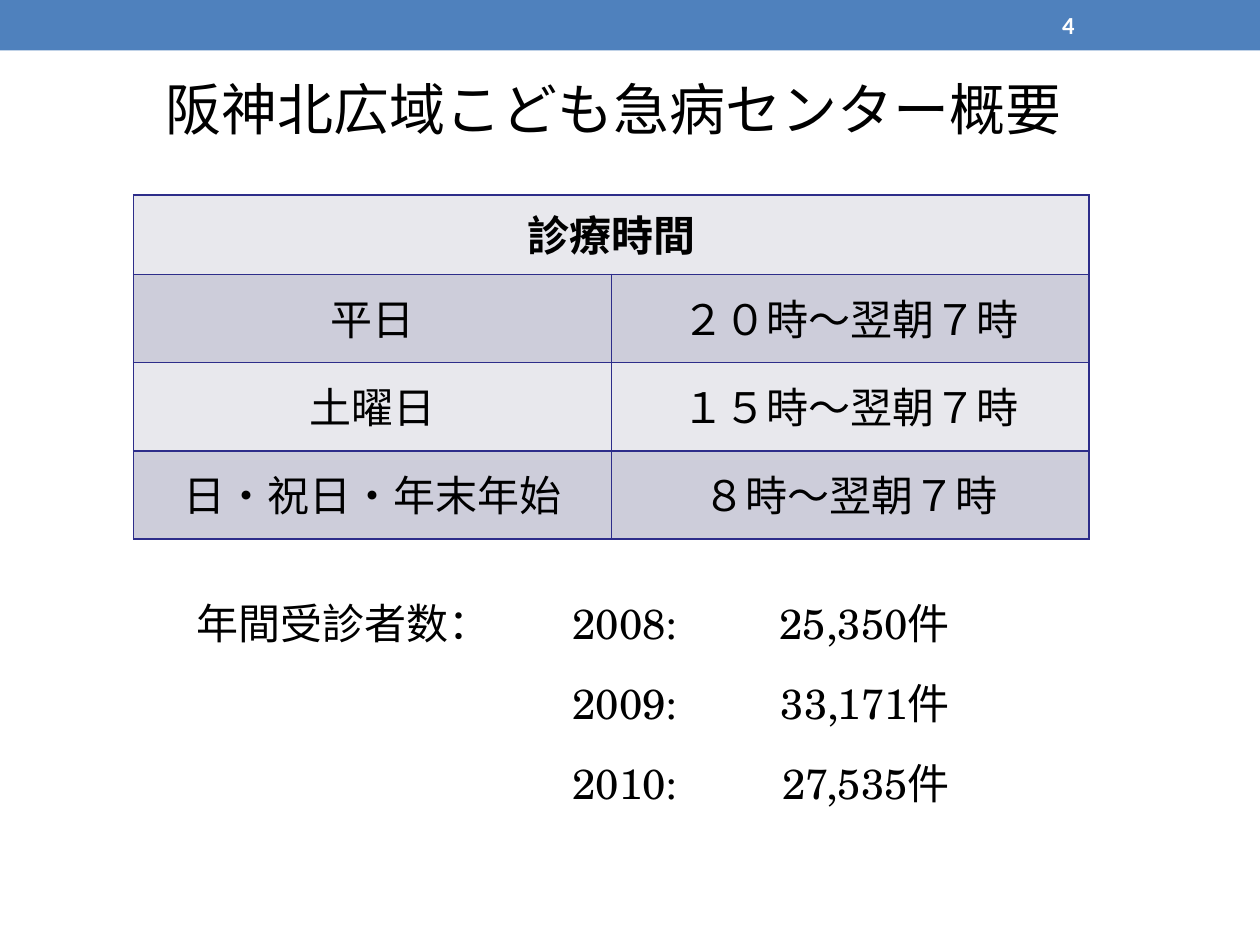
from dataclasses import dataclass

from lxml import etree
from pptx import Presentation
from pptx import util as u
from pptx.dml.color import RGBColor
from pptx.enum import shapes, text
from pptx.oxml import ns


@dataclass(frozen=True)
class Theme:
    body_font: str = "TeX Gyre Schola"
    number_font: str = "Calibri"
    title_size: float = 32
    body_size: float = 24
    number_size: float = 14
    ink: str = "000000"
    paper: str = "FFFFFF"
    banner: str = "4F81BD"
    border: str = "2D2D8A"
    bands: tuple = ("E8E8ED", "CDCDDA")


def write(paragraph, content, *, font, size, color, bold=False, align=None,
          before=None, spacing=None, tabs=()):
    run = paragraph.add_run()
    run.text = content
    run.font.name = font
    run.font.size = u.Pt(size)
    run.font.bold = bold
    run.font.color.rgb = RGBColor.from_string(color)
    east_asian = etree.SubElement(run.font._element, ns.qn("a:ea"))
    east_asian.set("typeface", font)
    paragraph.alignment = align
    if before is not None:
        paragraph.space_before = u.Pt(before)
    if spacing is not None:
        paragraph.line_spacing = spacing
    if tabs:
        properties = paragraph._p.get_or_add_pPr()
        tab_list = etree.SubElement(properties, ns.qn("a:tabLst"))
        for position in tabs:
            tab = etree.SubElement(tab_list, ns.qn("a:tab"))
            tab.set("pos", str(u.Pt(position)))
            tab.set("algn", "r")


class SlideBuilder:
    def __init__(self, presentation, theme):
        self.theme = theme
        self.slide = presentation.slides.add_slide(presentation.slide_layouts[5])

    def body_format(self, **changes):
        theme = self.theme
        return {"font": theme.body_font, "size": theme.body_size,
                "color": theme.ink, **changes}

    def banner(self, left, top, width, height):
        shape = self.slide.shapes.add_shape(
            shapes.MSO_SHAPE.RECTANGLE, *map(u.Pt, (left, top, width, height)))
        shape.shadow.inherit = False
        shape.fill.solid()
        shape.fill.fore_color.rgb = RGBColor.from_string(self.theme.banner)
        shape.line.fill.background()

    def title(self, content, left, top, width, height):
        shape = self.slide.shapes.title
        shape.left, shape.top, shape.width, shape.height = map(
            u.Pt, (left, top, width, height))
        frame = shape.text_frame
        frame.auto_size = text.MSO_AUTO_SIZE.NONE
        frame.vertical_anchor = text.MSO_ANCHOR.MIDDLE
        frame.margin_left = frame.margin_right = u.Pt(3)
        frame.margin_top = frame.margin_bottom = u.Pt(3)
        write(frame.paragraphs[0], content, align=text.PP_ALIGN.CENTER, spacing=0.9,
              **self.body_format(size=self.theme.title_size))

    def text_box(self, lines, left, top, width, height,
                 anchor=text.MSO_ANCHOR.TOP, **style):
        shape = self.slide.shapes.add_textbox(*map(u.Pt, (left, top, width, height)))
        frame = shape.text_frame
        frame.word_wrap = True
        frame.vertical_anchor = anchor
        for index, line in enumerate(lines):
            paragraph = frame.add_paragraph() if index else frame.paragraphs[0]
            write(paragraph, line, **self.body_format(**style))

    def cell_border(self, cell):
        properties = cell._tc.get_or_add_tcPr()
        for index, side in enumerate(("lnL", "lnR", "lnT", "lnB")):
            line = etree.Element(ns.qn(f"a:{side}"), w=str(u.Pt(1)))
            fill = etree.SubElement(line, ns.qn("a:solidFill"))
            etree.SubElement(fill, ns.qn("a:srgbClr"), val=self.theme.border)
            properties.insert(index, line)

    def table(self, heading, rows, left, top, width, row_heights):
        table = self.slide.shapes.add_table(
            len(rows) + 1, len(rows[0]),
            *map(u.Pt, (left, top, width, sum(row_heights)))).table
        for row, height in zip(table.rows, row_heights):
            row.height = u.Pt(height)
        table.cell(0, 0).merge(table.cell(0, len(rows[0]) - 1))
        for row_index, values in enumerate([(heading, ""), *rows]):
            for column_index, value in enumerate(values):
                cell = table.cell(row_index, column_index)
                cell.vertical_anchor = text.MSO_ANCHOR.MIDDLE
                cell.fill.solid()
                band = self.theme.bands[row_index % 2]
                cell.fill.fore_color.rgb = RGBColor.from_string(band)
                self.cell_border(cell)
                if value:
                    write(cell.text_frame.paragraphs[0], value, bold=row_index == 0,
                          align=text.PP_ALIGN.CENTER, **self.body_format())


def main():
    presentation = Presentation()
    presentation.slide_width = u.Pt(720)
    presentation.slide_height = u.Pt(540)
    theme = Theme()
    builder = SlideBuilder(presentation, theme)

    builder.banner(0, 0, 720, 28.8)
    builder.table(
        "診療時間",
        [("平日", "２０時〜翌朝７時"),
         ("土曜日", "１５時〜翌朝７時"),
         ("日・祝日・年末年始", "８時〜翌朝７時")],
        76.3, 111.4, 546, (45.4, 50.4, 50.4, 50.4))
    builder.title("阪神北広域こども急病センター概要", 23.8, 23.8, 653.8, 80.6)
    builder.text_box(
        ["年間受診者数：\u3000\t2008:\t25,350件".replace("\u3000", "　"),
         "\t2009:\t33,171件",
         "\t2010:\t27,535件"],
        105.1, 337.7, 499, 128.9, before=17, tabs=(275, 430.6))
    builder.text_box(
        ["4"], 599.8, 1.4, 84.2, 25.9, anchor=text.MSO_ANCHOR.MIDDLE,
        font=theme.number_font, size=theme.number_size, color=theme.paper, bold=True)

    presentation.save("out.pptx")


if __name__ == "__main__":
    main()
